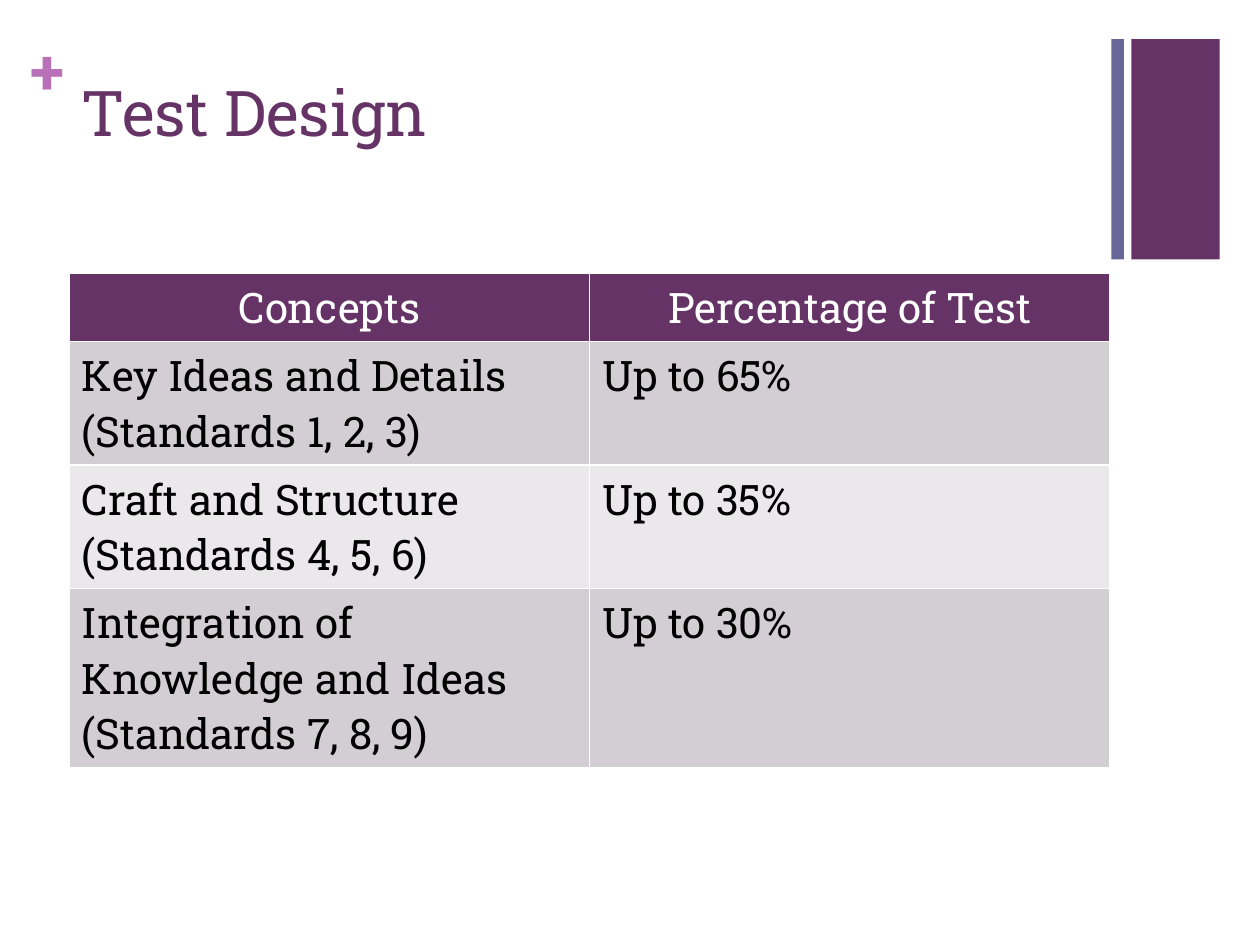
from dataclasses import dataclass

from pptx import Presentation
from pptx.dml.color import RGBColor
from pptx.enum.text import MSO_ANCHOR, MSO_AUTO_SIZE, PP_ALIGN
from pptx.enum.shapes import MSO_SHAPE
from pptx.util import Inches, Pt


@dataclass(frozen=True)
class Theme:
    font: str = "Roboto Slab"
    plum: str = "663366"
    slate: str = "666699"
    orchid: str = "B870B8"
    white: str = "FFFFFF"
    black: str = "000000"
    bands: tuple = ("D3CED3", "EAE8EA")
    heading_size: int = 36
    table_size: int = 24


theme = Theme()


def style_text(frame, size, color, align=PP_ALIGN.LEFT, bold=False):
    for paragraph in frame.paragraphs:
        paragraph.alignment = align
        paragraph.font.name = theme.font
        paragraph.font.size = Pt(size)
        paragraph.font.bold = bold
        paragraph.font.color.rgb = RGBColor.from_string(color)


prs = Presentation()
prs.slide_width, prs.slide_height = Inches(10), Inches(7.5)
slide = prs.slides.add_slide(prs.slide_layouts.get_by_name("Title Only"))

# Content column shared by the title and the table
content_left, content_width = Inches(0.55), Inches(8.26)

# Corner bars
for left, width, color in ((8.98, 0.7, theme.plum), (8.82, 0.1, theme.slate)):
    bar = slide.shapes.add_shape(
        MSO_SHAPE.RECTANGLE, Inches(left), Inches(0.31), Inches(width), Inches(1.75))
    bar.shadow.inherit = False
    bar.fill.solid()
    bar.fill.fore_color.rgb = RGBColor.from_string(color)
    bar.line.fill.background()

# Plus sign
plus = slide.shapes.add_textbox(
    Inches(0.24), Inches(0.25), Inches(0.29), Inches(0.61)).text_frame
plus.margin_left = plus.margin_right = plus.margin_top = plus.margin_bottom = 0
plus.text = "+"
style_text(plus, theme.heading_size, theme.orchid, bold=True)

# Title
title = slide.shapes.title
title.left, title.top = content_left, Inches(0.53)
title.width, title.height = content_width, Inches(1.22)
heading = title.text_frame
heading.text = "Test Design"
heading.vertical_anchor = MSO_ANCHOR.TOP
heading.auto_size = MSO_AUTO_SIZE.NONE
style_text(heading, theme.heading_size, theme.plum)

# Table: each row is as tall as its number of text lines needs
design = (
    (1, "Concepts", "Percentage of Test"),
    (2, "Key Ideas and Details\n(Standards 1, 2, 3)", "Up to 65%"),
    (2, "Craft and Structure\n(Standards 4, 5, 6)", "Up to 35%"),
    (3, "Integration of Knowledge and Ideas\n(Standards 7, 8, 9)", "Up to 30%"),
)
row_padding, line_height = Inches(0.1), Inches(0.44)
heights = [row_padding + lines * line_height for lines, *_ in design]
table = slide.shapes.add_table(
    len(design), 2, content_left, Inches(2.17), content_width, sum(heights)).table

for row, (_, *entries) in enumerate(design):
    table.rows[row].height = heights[row]
    is_header = row == 0
    fill = theme.plum if is_header else theme.bands[(row - 1) % 2]
    for column, entry in enumerate(entries):
        cell = table.cell(row, column)
        cell.fill.solid()
        cell.fill.fore_color.rgb = RGBColor.from_string(fill)
        cell.text = entry
        style_text(cell.text_frame, theme.table_size,
                   theme.white if is_header else theme.black,
                   PP_ALIGN.CENTER if is_header else PP_ALIGN.LEFT)

prs.save("out.pptx")
